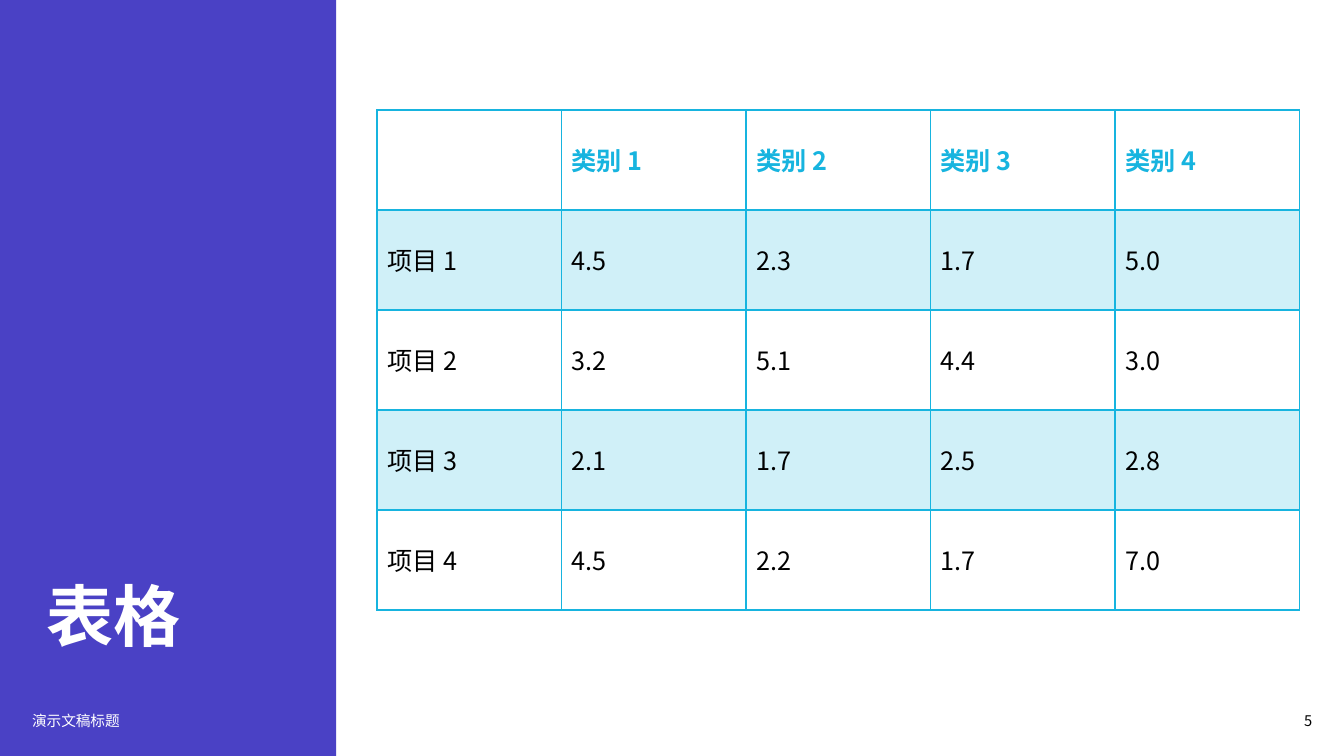
from lxml.etree import SubElement
from pptx import Presentation
from pptx.dml.color import RGBColor
from pptx.enum.shapes import MSO_SHAPE
from pptx.enum.text import MSO_ANCHOR, MSO_AUTO_SIZE, PP_ALIGN
from pptx.oxml import parse_xml
from pptx.oxml.ns import nsdecls, qn
from pptx.util import Cm, Pt

# Content
TITLE = "表格"
FOOTER = "演示文稿标题"
PAGE = "5"
ROWS = [
    ("", "类别 1", "类别 2", "类别 3", "类别 4"),
    ("项目 1", "4.5", "2.3", "1.7", "5.0"),
    ("项目 2", "3.2", "5.1", "4.4", "3.0"),
    ("项目 3", "2.1", "1.7", "2.5", "2.8"),
    ("项目 4", "4.5", "2.2", "1.7", "7.0"),
]

FONT = "Noto Sans CJK SC"
PURPLE, CYAN, WHITE, BLACK = "4A41C5", "17B4DF", "FFFFFF", "000000"
COL_W, ROW_H = Cm(4.65), Cm(2.52)
TINT = 20  # percent opacity of the banded rows


def color(hex_text):
    return RGBColor.from_string(hex_text)


def style(tf, size, hex_text, bold=False):
    for p in tf.paragraphs:
        for r in p.runs:
            r.font.name, r.font.size, r.font.bold = FONT, Pt(size), bold
            r.font.color.rgb = color(hex_text)
            SubElement(r.font._element, qn("a:ea")).set("typeface", FONT)


def add_label(s, box, text, hex_text, align):
    tf = s.shapes.add_textbox(*box).text_frame
    tf.word_wrap = True
    tf.vertical_anchor = MSO_ANCHOR.MIDDLE
    tf.text = text
    tf.paragraphs[0].alignment = align
    style(tf, 10.5, hex_text)


def set_borders(cell, widths):
    tc_pr = cell._tc.get_or_add_tcPr()
    for i, (side, width) in enumerate(widths.items()):
        tc_pr.insert(i, parse_xml(
            f'<a:ln{side} {nsdecls("a")} w="{Pt(width)}"><a:solidFill>'
            f'<a:srgbClr val="{CYAN}"/></a:solidFill></a:ln{side}>'))


def tint(cell):
    cell.fill.solid()
    cell.fill.fore_color.rgb = color(CYAN)
    srgb = cell._tc.tcPr.find(".//" + qn("a:srgbClr"))
    SubElement(srgb, qn("a:alpha")).set("val", str(TINT * 1000))


prs = Presentation()
prs.slide_width, prs.slide_height = Cm(33.87), Cm(19.05)
s = prs.slides.add_slide(prs.slide_layouts[5])

# Side panel, behind the title
title = s.shapes.title
panel = s.shapes.add_shape(MSO_SHAPE.RECTANGLE, 0, 0, Cm(8.47), prs.slide_height)
panel.shadow.inherit = False
panel.fill.solid()
panel.fill.fore_color.rgb = color(PURPLE)
panel.line.fill.background()
title._element.addprevious(panel._element)

# Title
title.left, title.top, title.width, title.height = Cm(0.92), Cm(2.77), Cm(6.63), Cm(13.74)
tf = title.text_frame
tf.text = TITLE
tf.auto_size = MSO_AUTO_SIZE.NONE
tf.vertical_anchor = MSO_ANCHOR.BOTTOM
tf.margin_bottom = 0
tf.paragraphs[0].alignment = PP_ALIGN.LEFT
style(tf, 48, WHITE, bold=True)
tf.paragraphs[0].runs[0].font._element.set("spc", "-20")

# Footer and page number
add_label(s, (Cm(0.56), Cm(17.65), Cm(7.7), Cm(1.02)), FOOTER, WHITE, PP_ALIGN.LEFT)
add_label(s, (Cm(31.57), Cm(17.65), Cm(1.75), Cm(1.02)), PAGE, BLACK, PP_ALIGN.RIGHT)

# Table
n_rows, n_cols = len(ROWS), len(ROWS[0])
table = s.shapes.add_table(n_rows, n_cols, Cm(9.5), Cm(2.77),
                           COL_W * n_cols, ROW_H * n_rows).table
table.horz_banding = False
for col in table.columns:
    col.width = COL_W
for i, values in enumerate(ROWS):
    table.rows[i].height = ROW_H
    header = i == 0
    for j, value in enumerate(values):
        cell = table.cell(i, j)
        cell.text = value
        cell.vertical_anchor = MSO_ANCHOR.MIDDLE
        style(cell.text_frame, 18, CYAN if header else BLACK, bold=header)
        if i % 2:
            tint(cell)
        else:
            cell.fill.background()
        set_borders(cell, {"L": 1, "R": 1, "T": 2 if i == 1 else 1, "B": 2 if header else 1})

prs.save("out.pptx")
